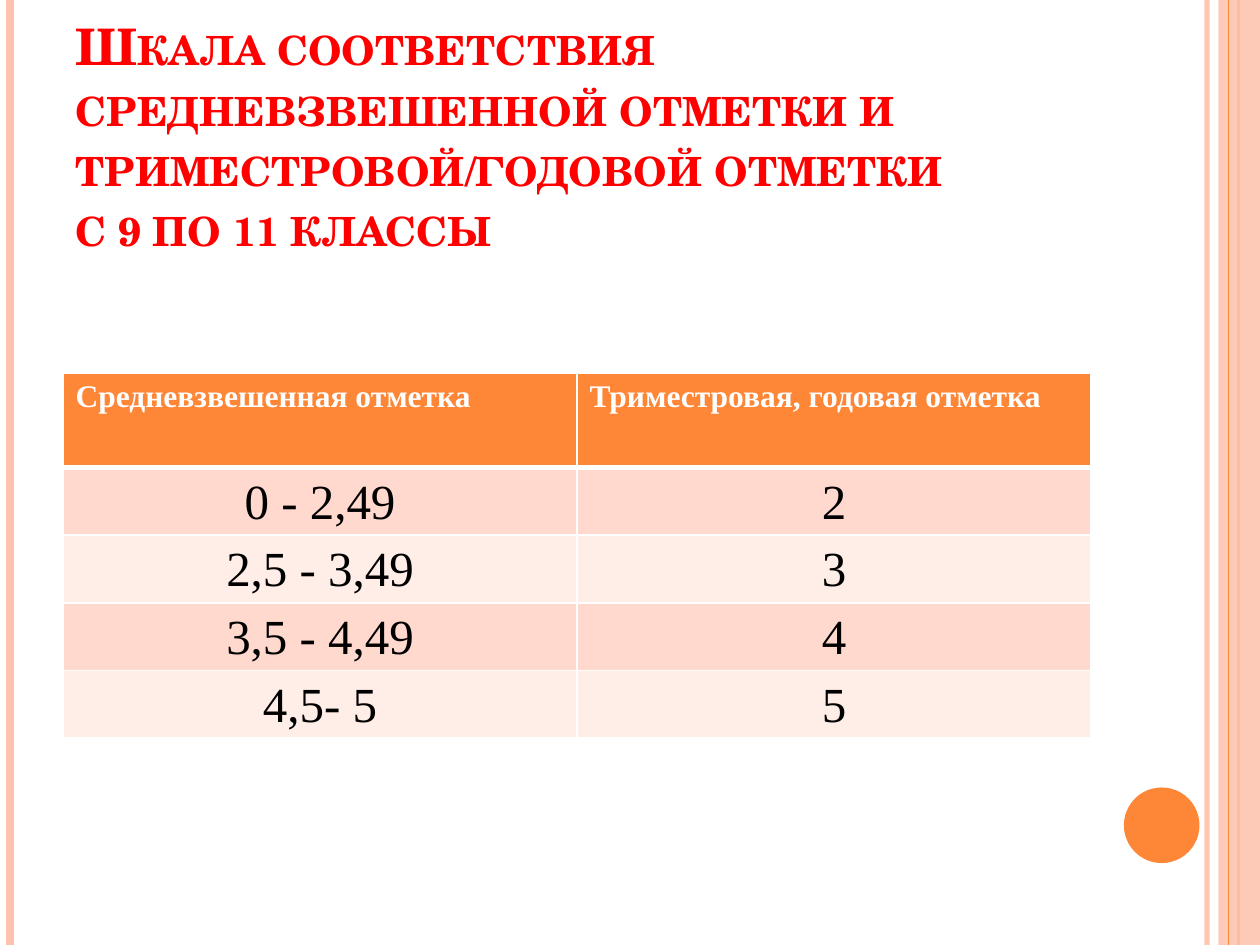
from dataclasses import dataclass

from lxml import etree
from pptx import Presentation
from pptx.dml.color import RGBColor
from pptx.enum.shapes import MSO_CONNECTOR, MSO_SHAPE
from pptx.enum.text import MSO_ANCHOR, PP_ALIGN
from pptx.oxml.ns import qn
from pptx.util import Inches, Pt

STRAIGHT = MSO_CONNECTOR.STRAIGHT
RECTANGLE, OVAL = MSO_SHAPE.RECTANGLE, MSO_SHAPE.OVAL
BOTTOM = MSO_ANCHOR.BOTTOM
LEFT, CENTER = PP_ALIGN.LEFT, PP_ALIGN.CENTER

SLIDE_WIDTH, SLIDE_HEIGHT = 10, 7.5
ORANGE, PEACH, WHITE = "FE8637", "FEC3AE", "FFFFFF"
BAND_COLORS = ("FFD9CE", "FFEDE8")
HEADER_HEIGHT, ROW_HEIGHT = 0.75, 0.49

TITLE = (
    "Шкала соответствия средневзвешенной отметки и "
    "триместровой/годовой отметки \vс 9 по 11 классы"
)
GRADES = (
    ("Средневзвешенная отметка", "Триместровая, годовая отметка"),
    ("0 - 2,49", "2"),
    ("2,5 - 3,49", "3"),
    ("3,5 - 4,49", "4"),
    ("4,5- 5", "5"),
)


@dataclass
class Stripe:
    x: float
    color: str
    width: float
    opacity: int = 100


@dataclass
class Decoration:
    preset: int
    left: float
    top: float
    width: float
    height: float
    color: str
    opacity: int = 100


BACK_STRIPES = (
    Stripe(9.58, PEACH, 3, 93),
    Stripe(0.08, PEACH, 4.5),
    Stripe(9.83, ORANGE, 1.5),
)
SIDE_BAND = Decoration(RECTANGLE, 9.67, 0, 0.33, SLIDE_HEIGHT, PEACH, 87)
FRONT_STRIPE = Stripe(9.75, ORANGE, 0.75)
CIRCLE = Decoration(OVAL, 8.92, 6.25, 0.6, 0.6, ORANGE)


def rgb(value: str) -> RGBColor:
    return RGBColor.from_string(value)


def paint(fill, color: str) -> None:
    fill.solid()
    fill.fore_color.rgb = rgb(color)


def set_opacity(shape, percent: int) -> None:
    """Apply opacity to the first colour of the shape's fill or line."""
    if percent < 100:
        color = next(shape.element.spPr.iter(qn("a:srgbClr")))
        etree.SubElement(color, qn("a:alpha"), val=str(percent * 1000))


def add_stripe(slide, stripe: Stripe) -> None:
    x = Inches(stripe.x)
    connector = slide.shapes.add_connector(STRAIGHT, x, 0, x, Inches(SLIDE_HEIGHT))
    paint(connector.line.fill, stripe.color)
    connector.line.width = Pt(stripe.width)
    set_opacity(connector, stripe.opacity)
    etree.SubElement(connector.element.spPr, qn("a:effectLst"))


def add_decoration(slide, item: Decoration) -> None:
    box = (Inches(v) for v in (item.left, item.top, item.width, item.height))
    shape = slide.shapes.add_shape(item.preset, *box)
    shape.shadow.inherit = False
    paint(shape.fill, item.color)
    shape.line.fill.background()
    set_opacity(shape, item.opacity)


def format_font(font, color: str, **values) -> None:
    font.color.rgb = rgb(color)
    for name, value in values.items():
        setattr(font, name, value)


def add_title(slide) -> None:
    box = slide.shapes.add_textbox(Inches(0.5), Inches(0.3), Inches(8.17), Inches(2.27))
    frame = box.text_frame
    settings = {
        "word_wrap": True,
        "vertical_anchor": BOTTOM,
        "margin_bottom": Inches(0.53),
        "text": TITLE,
    }
    for name, value in settings.items():
        setattr(frame, name, value)
    for run in frame.paragraphs[0].runs:
        format_font(run.font, "FF0000", name="TeX Gyre Schola", size=Pt(28.8), bold=True)
        run.font._element.set("cap", "small")


def set_borders(cell, top: float, bottom: float) -> None:
    properties = cell._tc.get_or_add_tcPr()
    for side, width in (("L", 1), ("R", 1), ("T", top), ("B", bottom)):
        line = etree.SubElement(properties, qn(f"a:ln{side}"), w=str(Pt(width)))
        fill = etree.SubElement(line, qn("a:solidFill"))
        etree.SubElement(fill, qn("a:srgbClr"), val=WHITE)


def fill_cell(cell, text: str, row: int) -> None:
    header = row == 0
    set_borders(cell, top=3 if row == 1 else 1, bottom=3 if header else 1)
    paint(cell.fill, ORANGE if header else BAND_COLORS[(row - 1) % 2])
    cell.text = text
    paragraph = cell.text_frame.paragraphs[0]
    paragraph.alignment = LEFT if header else CENTER
    if not header:
        paragraph.line_spacing = 1.15
        cell.margin_left = cell.margin_right = Inches(0.03)
        cell.margin_top = cell.margin_bottom = 0
    format_font(
        paragraph.runs[0].font,
        WHITE if header else "000000",
        name="Times New Roman",
        size=Pt(18 if header else 28),
        bold=header,
    )


def add_grade_table(slide) -> None:
    height = HEADER_HEIGHT + ROW_HEIGHT * (len(GRADES) - 1)
    table = slide.shapes.add_table(
        len(GRADES), len(GRADES[0]),
        Inches(0.5), Inches(2.96), Inches(8.16), Inches(height),
    ).table
    for row, texts in enumerate(GRADES):
        table.rows[row].height = Inches(ROW_HEIGHT if row else HEADER_HEIGHT)
        for column, text in enumerate(texts):
            fill_cell(table.cell(row, column), text, row)


def main() -> None:
    presentation = Presentation()
    presentation.slide_width = Inches(SLIDE_WIDTH)
    presentation.slide_height = Inches(SLIDE_HEIGHT)
    slide = presentation.slides.add_slide(presentation.slide_layouts[6])
    for stripe in BACK_STRIPES:
        add_stripe(slide, stripe)
    add_decoration(slide, SIDE_BAND)
    add_stripe(slide, FRONT_STRIPE)
    add_decoration(slide, CIRCLE)
    add_title(slide)
    add_grade_table(slide)
    presentation.save("out.pptx")


if __name__ == "__main__":
    main()
